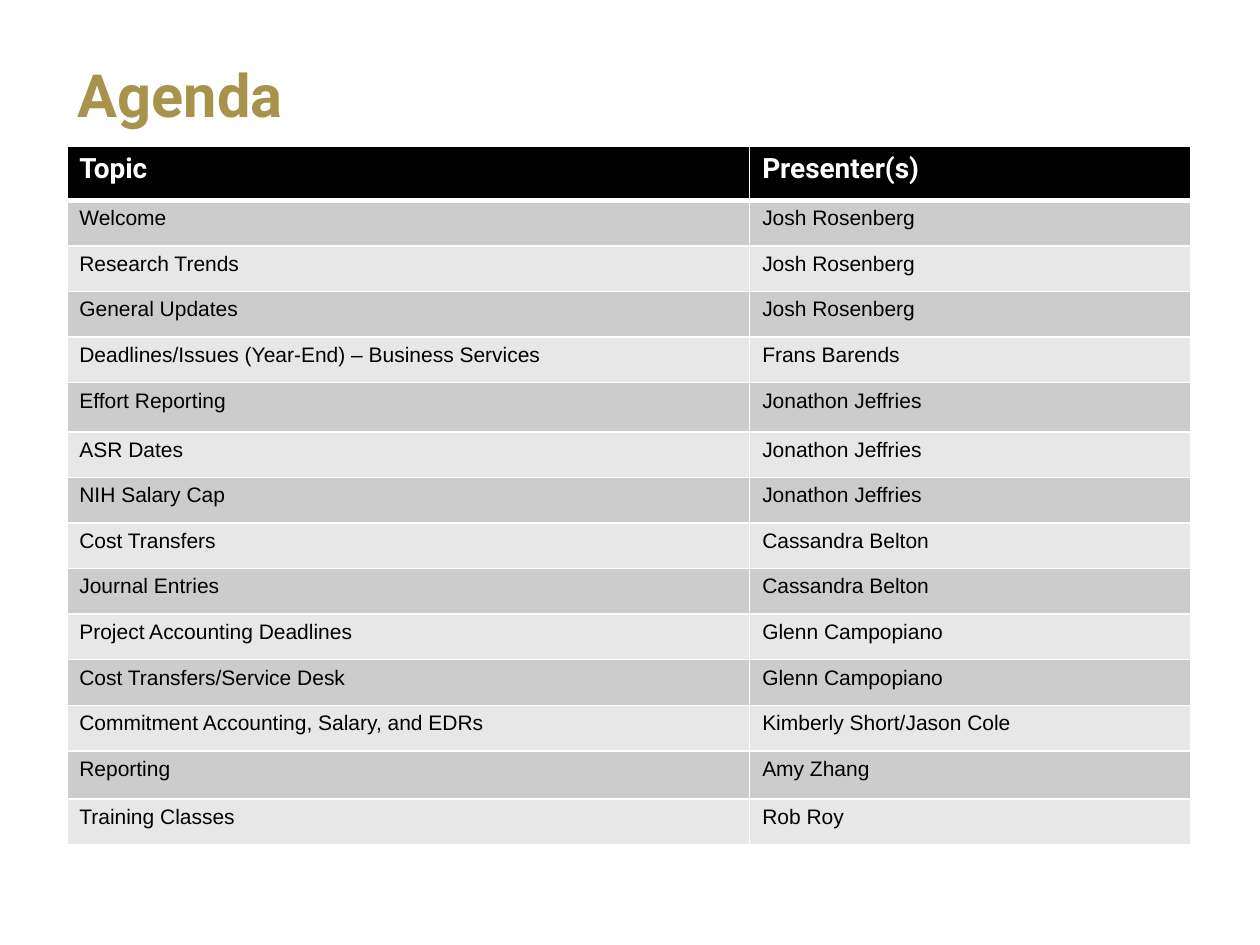
from lxml import etree
from pptx import Presentation
from pptx import util as u
from pptx.dml.color import RGBColor
from pptx.enum import text
from pptx.oxml.ns import qn

COLORS = {
    "gold": "A7934B",
    "white": "FFFFFF",
    "black": "000000",
    "dark band": "CCCCCC",
    "light band": "E7E7E7",
}
AGENDA = [
    ("Topic", "Presenter(s)"),
    ("Welcome", "Josh Rosenberg"),
    ("Research Trends", "Josh Rosenberg"),
    ("General Updates", "Josh Rosenberg"),
    ("Deadlines/Issues (Year-End) – Business Services", "Frans Barends"),
    ("Effort Reporting", "Jonathon Jeffries"),
    ("ASR Dates", "Jonathon Jeffries"),
    ("NIH Salary Cap", "Jonathon Jeffries"),
    ("Cost Transfers", "Cassandra Belton"),
    ("Journal Entries", "Cassandra Belton"),
    ("Project Accounting Deadlines", "Glenn Campopiano"),
    ("Cost Transfers/Service Desk", "Glenn Campopiano"),
    ("Commitment Accounting, Salary, and EDRs", "Kimberly Short/Jason Cole"),
    ("Reporting", "Amy Zhang"),
    ("Training Classes", "Rob Roy"),
]
LEFT = 0.53
COLUMN_WIDTHS = [5.42, 3.5]
ROW_HEIGHT = 0.362
SPECIAL_HEIGHTS = {0: 0.43, 5: 0.39, 13: 0.38}


def style_font(font, name, size, color, bold):
    font.name, font.size, font.bold = name, u.Pt(size), bold
    font.color.rgb = RGBColor.from_string(COLORS[color])


def add_border(cell, side, points):
    """Draw a white line on one side (L, R, T or B); call before filling the cell."""
    line = etree.SubElement(cell._tc.get_or_add_tcPr(), qn(f"a:ln{side}"), w=str(u.Pt(points)))
    fill = etree.SubElement(line, qn("a:solidFill"))
    etree.SubElement(fill, qn("a:srgbClr"), val=COLORS["white"])


presentation = Presentation()
presentation.slide_width, presentation.slide_height = u.Inches(10), u.Inches(7.5)
slide = presentation.slides.add_slide(presentation.slide_layouts[6])

# Title
title = slide.shapes.add_textbox(u.Inches(LEFT - 0.01), u.Inches(0.09), u.Inches(8.06), u.Inches(1.38))
title.text_frame.word_wrap = True
title.text_frame.vertical_anchor = text.MSO_ANCHOR.MIDDLE
paragraph = title.text_frame.paragraphs[0]
paragraph.text = "Agenda"
paragraph.line_spacing = 0.9
style_font(paragraph.font, "Roboto", 34, "gold", True)

# Agenda table
heights = [SPECIAL_HEIGHTS.get(row, ROW_HEIGHT) for row in range(len(AGENDA))]
table = slide.shapes.add_table(
    len(AGENDA), len(COLUMN_WIDTHS), u.Inches(LEFT), u.Inches(1.16),
    u.Inches(sum(COLUMN_WIDTHS)), u.Inches(sum(heights)),
).table
for column, width in zip(table.columns, COLUMN_WIDTHS):
    column.width = u.Inches(width)

for row, entries in enumerate(AGENDA):
    table.rows[row].height = u.Inches(heights[row])
    is_header = row == 0
    band = "black" if is_header else "dark band" if row % 2 else "light band"
    for column, entry in enumerate(entries):
        cell = table.cell(row, column)
        add_border(cell, "L", 1)
        add_border(cell, "R", 1)
        add_border(cell, "T", 3 if row == 1 else 1)
        add_border(cell, "B", 3 if is_header else 1)
        cell.fill.solid()
        cell.fill.fore_color.rgb = RGBColor.from_string(COLORS[band])
        cell.text = entry
        font = cell.text_frame.paragraphs[0].font
        if is_header:
            style_font(font, "Roboto", 16, "white", True)
        else:
            style_font(font, "Arial", 12, "black", False)

presentation.save("out.pptx")
